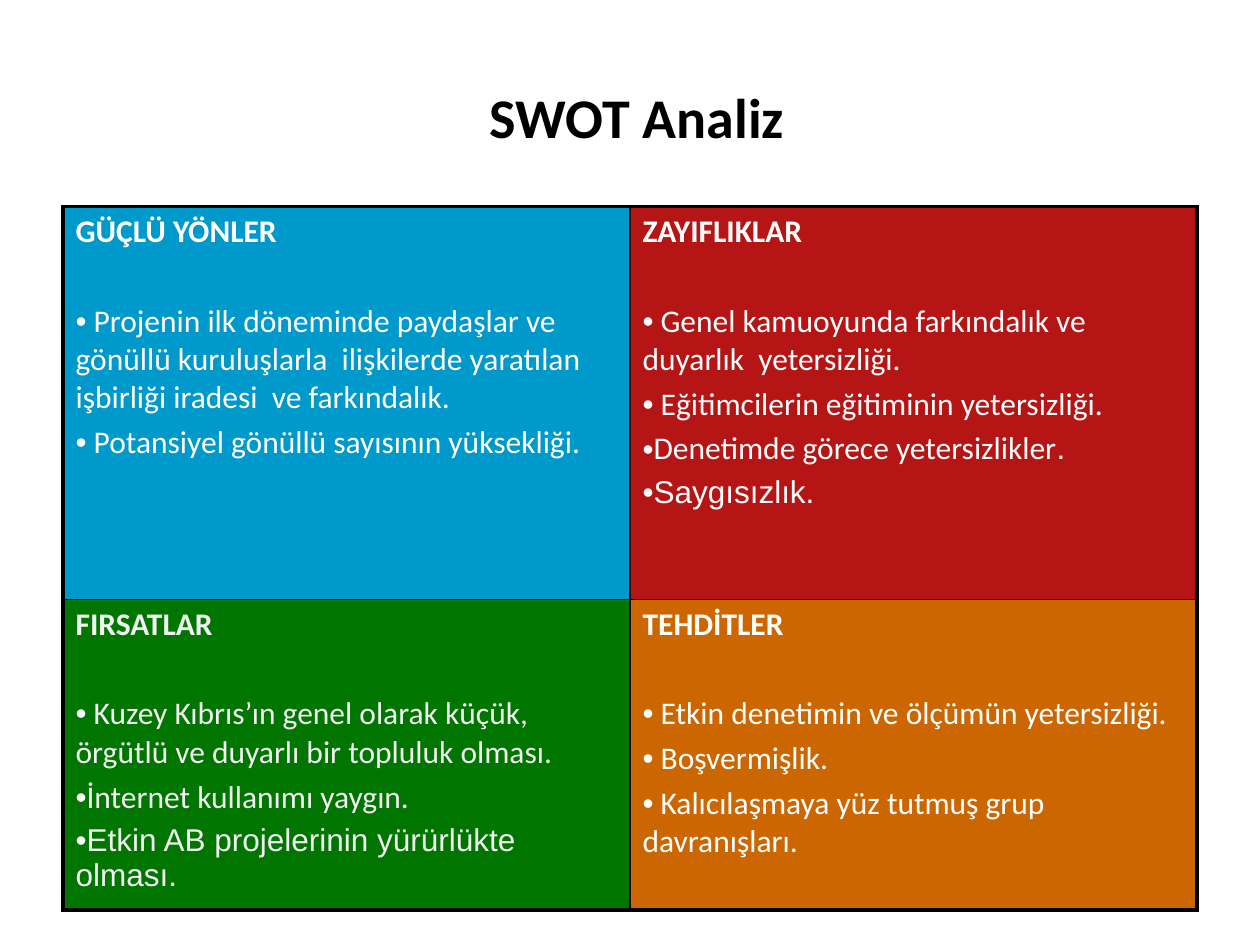
from lxml.etree import SubElement
from pptx import Presentation
from pptx.dml.color import RGBColor
from pptx.enum.text import MSO_ANCHOR, PP_ALIGN
from pptx.oxml.ns import qn
from pptx.util import Pt

COLORS = {
    "black": "000000", "white": "FFFFFF", "pale": "F2F2F2",
    "blue": "0099CC", "red": "B51515", "green": "007600", "orange": "CC6600",
}
THICK, THIN = 2.25, 1
BODY, HEAD = "Calibri", "Calibri"
ALT = "Arial"

# Each part: heading, fill, text colour, bullets; a bullet is a list of (text, font).
PARTS = [
    [
        ("GÜÇLÜ YÖNLER", "blue", "white", [
            [(" Projenin ilk döneminde paydaşlar ve gönüllü kuruluşlarla  "
              "ilişkilerde yaratılan işbirliği iradesi  ve farkındalık.", BODY)],
            [(" Potansiyel gönüllü sayısının yüksekliği.", BODY)],
        ]),
        ("ZAYIFLIKLAR", "red", "white", [
            [(" Genel kamuoyunda farkındalık ve duyarlık  yetersizliği.", BODY)],
            [(" Eğitimcilerin eğitiminin yetersizliği.", BODY)],
            [("Denetimde görece yetersizlikler", BODY), (".", ALT)],
            [("Saygısızlık.", ALT)],
        ]),
    ],
    [
        ("FIRSATLAR", "green", "pale", [
            [(" Kuzey Kıbrıs’ın genel olarak küçük,  örgütlü ve duyarlı bir "
              "topluluk olması.", BODY)],
            [("İnternet kullanımı yaygın.", BODY)],
            [("Etkin AB projelerinin yürürlükte olması.", ALT)],
        ]),
        ("TEHDİTLER", "orange", "white", [
            [(" Etkin denetimin ve ölçümün yetersizliği.", BODY)],
            [(" Boşvermişlik.", BODY)],
            [(" Kalıcılaşmaya yüz tutmuş grup davranışları.", BODY)],
        ]),
    ],
]


def style(run, size, color, face, bold=False):
    font = run.font
    font.size, font.name, font.bold = Pt(size), face, bold
    font.color.rgb = RGBColor.from_string(COLORS[color])


def add_title(slide):
    box = slide.shapes.add_textbox(Pt(40), Pt(21.6), Pt(648), Pt(90))
    frame = box.text_frame
    frame.word_wrap = True
    frame.vertical_anchor = MSO_ANCHOR.MIDDLE
    frame.text = "SWOT Analiz"
    line = frame.paragraphs[0]
    line.alignment = PP_ALIGN.CENTER
    style(line.runs[0], 32, "black", HEAD, True)


def add_bullet(par):
    props = par._p.get_or_add_pPr()
    props.set("marL", "0")
    props.set("indent", "0")
    tint = SubElement(props, qn("a:buClr"))
    SubElement(tint, qn("a:srgbClr"), val=COLORS["white"])
    SubElement(props, qn("a:buFont"), typeface=ALT)
    SubElement(props, qn("a:buChar"), char="•")


def set_edges(cell, row, col):
    """Draw thick lines on the outside of the grid and thin ones inside."""
    props = cell._tc.get_or_add_tcPr()
    outer = {"lnL": col == 0, "lnR": col == 1, "lnT": row == 0, "lnB": row == 1}
    for tag, thick in outer.items():
        width = Pt(THICK if thick else THIN)
        edge = SubElement(props, qn("a:" + tag), w=str(int(width)))
        fill = SubElement(edge, qn("a:solidFill"))
        SubElement(fill, qn("a:srgbClr"), val=COLORS["black"])


def fill_cell(cell, head, fill, color, items):
    cell.fill.solid()
    cell.fill.fore_color.rgb = RGBColor.from_string(COLORS[fill])
    frame = cell.text_frame
    frame.text = head
    style(frame.paragraphs[0].runs[0], 18, color, HEAD, True)
    for index, item in enumerate(items):
        par = frame.add_paragraph()
        add_bullet(par)
        par.space_before = Pt(3.6 if index else 29)
        for text, face in item:
            run = par.add_run()
            run.text = text
            style(run, 18, color, face)


def add_grid(slide):
    shape = slide.shapes.add_table(2, 2, Pt(36), Pt(118), Pt(648), Pt(402))
    table = shape.table
    table.first_row = table.horz_banding = False
    for row, high in enumerate((224.5, 177.5)):
        table.rows[row].height = Pt(high)
        for col, part in enumerate(PARTS[row]):
            cell = table.cell(row, col)
            set_edges(cell, row, col)
            fill_cell(cell, *part)


def main():
    deck = Presentation()
    deck.slide_width, deck.slide_height = Pt(720), Pt(540)
    slide = deck.slides.add_slide(deck.slide_layouts[6])
    add_title(slide)
    add_grid(slide)
    deck.save("out.pptx")


if __name__ == "__main__":
    main()
